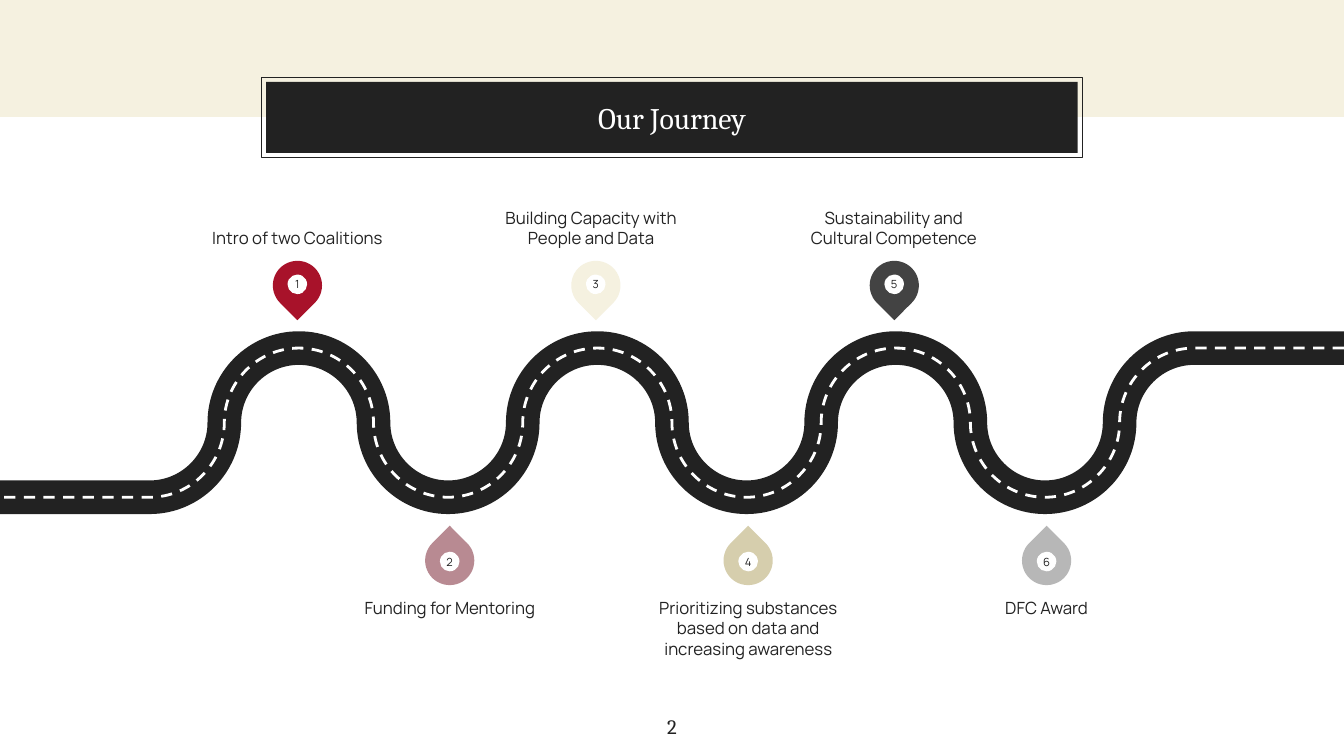
from collections import namedtuple

from lxml import etree
from pptx import Presentation
from pptx import util as u
from pptx.dml.color import RGBColor
from pptx.enum import dml, shapes, text
from pptx.oxml import ns

Box = namedtuple("Box", "left top width height")
INK, CREAM, WHITE = "222222", "F5F1E0", "FFFFFF"
SERIF, SANS = "Cambria", "Manrope"
PIN, DOT, DOT_SHIFT, LABEL_HEIGHT = 0.93, 0.37, 0.02, 1.47
PIN_STEP = 5.64
ARC_HANDLE = 0.55
UPPER = [
    ("1", "Intro of two Coalitions", "A8122A", 0),
    ("3", "Building Capacity with People and Data", CREAM, -0.09),
    ("5", "Sustainability and Cultural Competence", "434343", -0.01),
]
LOWER = [
    ("2", "Funding for Mentoring", "B88A92", 0),
    ("4", "Prioritizing substances based on data and increasing awareness", "D6CEAD", 0),
    ("6", "DFC Award", "B7B7B7", 0),
]


def paint(fill, color):
    """Give a fill one solid colour."""
    fill.solid()
    fill.fore_color.rgb = RGBColor.from_string(color)


def lengths(values):
    """Turn centimetres into slide lengths."""
    return [u.Cm(value) for value in values]


def add_shape(parent, kind, box, fill=None, line=None):
    """Add a flat preset shape with an optional fill and outline."""
    shape = parent.add_shape(kind, *lengths(box))
    shape.shadow.inherit = False
    for style, color in ((shape.fill, fill), (shape.line.fill, line)):
        if color:
            paint(style, color)
        else:
            style.background()
    if line:
        shape.line.width = u.Pt(0.75)
    return shape


def write(shape, words, size, font, color=INK, anchor="MIDDLE", inset=0):
    """Write one centred paragraph into a shape."""
    frame = shape.text_frame
    frame.word_wrap = True
    frame.vertical_anchor = text.MSO_ANCHOR[anchor]
    frame.margin_left = frame.margin_right = u.Cm(inset)
    frame.margin_top = frame.margin_bottom = u.Cm(inset)
    para = frame.paragraphs[0]
    para.text = words
    para.alignment = text.PP_ALIGN.CENTER
    para.font.size = u.Pt(size)
    para.font.name = font
    para.font.color.rgb = RGBColor.from_string(color)


def add_header(page, box):
    """Place the cream band and the framed title that overlaps its edge."""
    rectangle = shapes.MSO_SHAPE.RECTANGLE
    add_shape(page.shapes, rectangle, box, CREAM)
    width, height, gap = 15.52, 1.52, 0.09
    left = box.left + (box.width - width) / 2
    top = box.top + 1.46
    add_shape(page.shapes, rectangle, Box(left, top, width, height), line=INK)
    inner = Box(left + gap, top + gap, width - 2 * gap, height - 2 * gap)
    title = add_shape(page.shapes, rectangle, inner, INK)
    write(title, "Our Journey", 16, SERIF, WHITE, inset=0.25)


def road_points(box, quarters=14):
    """List the ends of the quarter circles from right to left."""
    radius = box.height / 2
    first = box.left + box.width / 2 + radius * quarters / 2
    drops = (0, radius, box.height, radius)
    bends = [(first - radius * i, box.top + drops[i % 4]) for i in range(quarters + 1)]
    bottom = box.top + box.height
    return [(box.left + box.width, box.top), *bends, (box.left, bottom)]


def round_bends(road):
    """Turn the straight pieces between the two road ends into quarter circles."""
    points = [(int(p.get("x")), int(p.get("y"))) for p in road._element.iter(ns.qn("a:pt"))]
    bends = list(road._element.iter(ns.qn("a:lnTo")))[1:-1]
    for index, (bend, start, end) in enumerate(zip(bends, points[1:], points[2:])):
        reach_x = ARC_HANDLE * (end[0] - start[0])
        reach_y = ARC_HANDLE * (end[1] - start[1])
        if index % 2 == 0:
            handles = [(start[0] + reach_x, start[1]), (end[0], end[1] - reach_y)]
        else:
            handles = [(start[0], start[1] + reach_y), (end[0] - reach_x, end[1])]
        curve = etree.Element(ns.qn("a:cubicBezTo"))
        for x, y in [*handles, end]:
            etree.SubElement(curve, ns.qn("a:pt"), x=str(round(x)), y=str(round(y)))
        bend.getparent().replace(bend, curve)


def add_road(page, box):
    """Draw the winding road and its dashed centre line."""
    start, *rest = [tuple(lengths(point)) for point in road_points(box)]
    for color, weight, dash in ((INK, 18, None), (WHITE, 1.5, dml.MSO_LINE.DASH)):
        builder = page.shapes.build_freeform(*start)
        builder.add_line_segments(rest, close=False)
        road = builder.convert_to_shape()
        round_bends(road)
        road.shadow.inherit = False
        road.fill.background()
        paint(road.line.fill, color)
        road.line.width = u.Pt(weight)
        road.line.dash_style = dash


def add_milestone(page, box, milestone, above):
    """Place a numbered pin and its label, pointing at the road."""
    number, words, color, nudge = milestone
    center = box.left + box.width / 2
    bottom = box.top + box.height
    pin_top = bottom - PIN if above else box.top
    label_top = box.top if above else bottom - LABEL_HEIGHT
    group = page.shapes.add_group_shape()
    pin_box = Box(center - PIN / 2, pin_top, PIN, PIN)
    pin = add_shape(group.shapes, shapes.MSO_SHAPE.TEAR, pin_box, color)
    pin.rotation = 135 if above else 315
    dot_top = pin_top + (PIN - DOT) / 2 + (-DOT_SHIFT if above else DOT_SHIFT)
    dot_box = Box(center - DOT / 2, dot_top, DOT, DOT)
    dot = add_shape(group.shapes, shapes.MSO_SHAPE.OVAL, dot_box, WHITE)
    write(dot, number, 6, SANS)
    label_box = Box(box.left + nudge, label_top, box.width, LABEL_HEIGHT)
    label = page.shapes.add_textbox(*lengths(label_box))
    write(label, words, 9, SANS, anchor="BOTTOM" if above else "TOP")


def add_page_number(page, box):
    """Write the page number at the foot of the slide."""
    number = page.shapes.add_textbox(*lengths(box))
    write(number, "2", 11, SERIF, anchor="TOP", inset=0.25)


def main():
    """Build the journey slide."""
    deck = Presentation()
    deck.slide_width, deck.slide_height = u.Cm(25.4), u.Cm(14.29)
    page = deck.slides.add_slide(deck.slide_layouts[6])
    add_header(page, Box(0, 0, 25.4, 2.21))
    add_road(page, Box(0, 6.58, 25.4, 2.82))
    rows = ((UPPER, Box(3.83, 3.22, 3.58, 2.64), True), (LOWER, Box(6.71, 10.13, 3.58, 2.64), False))
    for milestones, first, above in rows:
        for index, milestone in enumerate(milestones):
            box = first._replace(left=first.left + index * PIN_STEP)
            add_milestone(page, box, milestone, above)
    add_page_number(page, Box(11.94, 13.26, 1.52, 0.84))
    deck.save("out.pptx")


if __name__ == "__main__":
    main()
